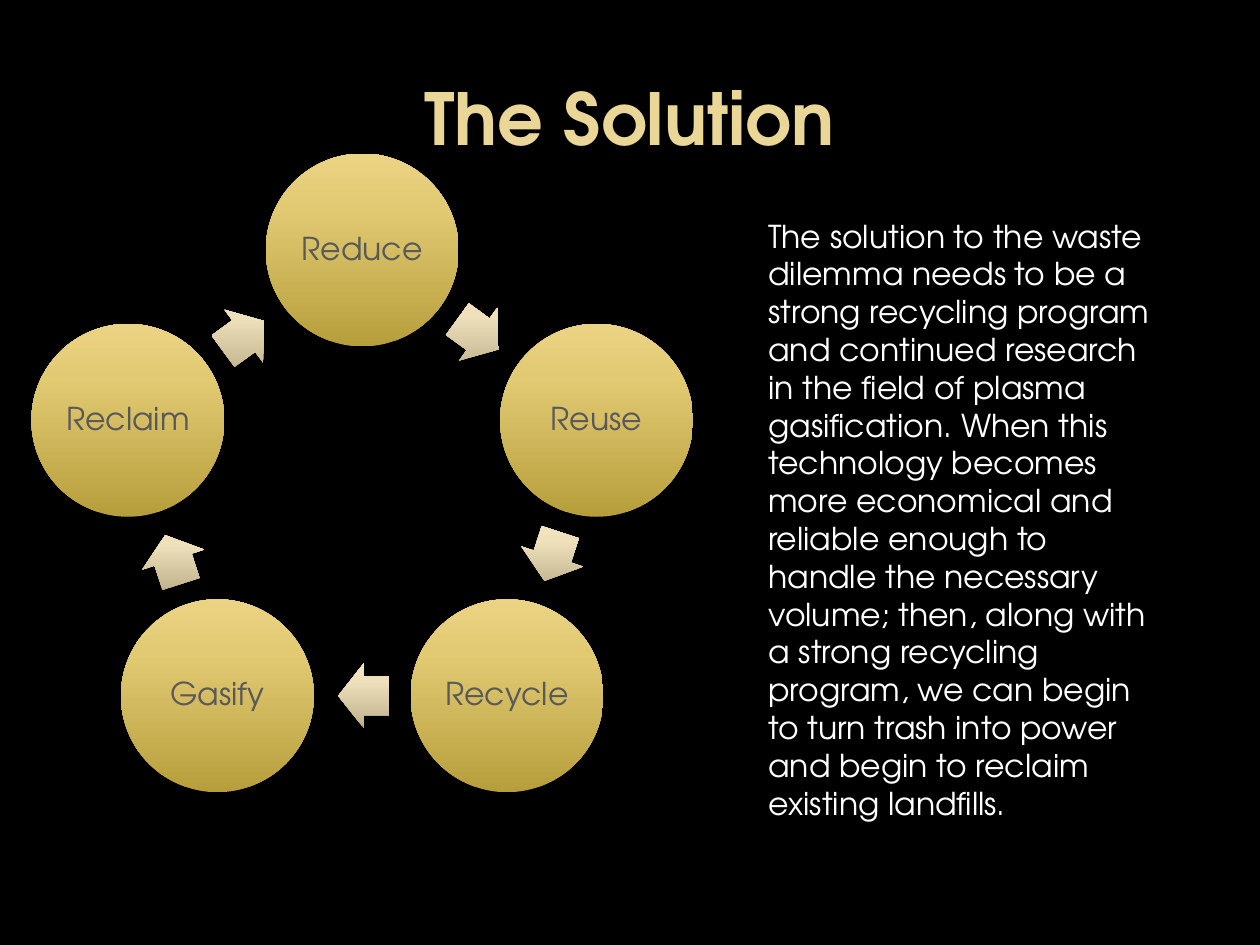
from math import cos, radians, sin

from pptx import Presentation
from pptx.dml.color import RGBColor
from pptx.enum.shapes import MSO_SHAPE
from pptx.enum.text import MSO_ANCHOR, PP_ALIGN
from pptx.oxml import parse_xml
from pptx.oxml.ns import nsdecls, qn
from pptx.util import Pt

# Content
TITLE = "The Solution"
STEPS = ["Reduce", "Reuse", "Recycle", "Gasify", "Reclaim"]
BODY = (
    "The solution to the waste dilemma needs to be a strong recycling program "
    "and continued research in the field of plasma gasification. When this "
    "technology becomes more economical and reliable enough to handle the "
    "necessary volume; then, along with a strong recycling program, we can "
    "begin to turn trash into power and begin to reclaim existing landfills."
)

# Style: gradient stops run from bottom to top
FONT = "TeX Gyre Adventor"
GOLD = [(0, "B79E3C"), (72, "E2CA73"), (100, "EBD384")]
CREAM = [(0, "BCAF89"), (72, "EDE0BA"), (100, "F2E5C0")]

# Cycle geometry in points
CENTER_X, CENTER_Y, RADIUS = 207, 283.7, 140.8
CIRCLE = 110.2
ARROW_WIDTH, ARROW_HEIGHT = 29.3, 37.2
ARROW_SETBACK = 0.9


def color(value):
    return RGBColor.from_string(value)


def write(box, text, size=18, fill="FFFFFF", bold=False, align=PP_ALIGN.LEFT,
          anchor=MSO_ANCHOR.TOP, spacing=None, inset=None):
    frame = box.text_frame
    frame.word_wrap = True
    frame.vertical_anchor = anchor
    if inset is not None:
        frame.margin_left = frame.margin_right = Pt(inset)
        frame.margin_top = frame.margin_bottom = Pt(inset)
    para = frame.paragraphs[0]
    para.alignment = align
    para.line_spacing = spacing
    span = para.add_run()
    span.text = text
    span.font.name = FONT
    span.font.size = Pt(size)
    span.font.bold = bold
    span.font.color.rgb = color(fill)


def add_text(page, left, top, width, height, text, **style):
    box = page.shapes.add_textbox(Pt(left), Pt(top), Pt(width), Pt(height))
    write(box, text, **style)


def add_part(page, kind, x, y, width, height, stops):
    """Add a gradient shape centred on x, y."""
    shape = page.shapes.add_shape(
        kind, Pt(x - width / 2), Pt(y - height / 2), Pt(width), Pt(height))
    shape.shadow.inherit = False
    shape.line.fill.background()
    shape.fill.background()
    marks = "".join(
        f'<a:gs pos="{place * 1000}"><a:srgbClr val="{value}"/></a:gs>'
        for place, value in stops)
    gradient = parse_xml(
        f'<a:gradFill {nsdecls("a")} rotWithShape="0"><a:gsLst>{marks}</a:gsLst>'
        '<a:lin ang="16200000" scaled="0"/></a:gradFill>')
    properties = shape._element.spPr
    properties.replace(properties.find(qn("a:noFill")), gradient)
    return shape


def on_ring(angle, radius):
    """Point at a clockwise angle from the top of the cycle."""
    turn = radians(angle)
    return CENTER_X + radius * sin(turn), CENTER_Y - radius * cos(turn)


def add_cycle(page):
    step = 360 / len(STEPS)
    for index, label in enumerate(STEPS):
        angle = index * step
        circle = add_part(page, MSO_SHAPE.OVAL, *on_ring(angle, RADIUS),
                          CIRCLE, CIRCLE, GOLD)
        write(circle, label, fill="595959", align=PP_ALIGN.CENTER,
              anchor=MSO_ANCHOR.MIDDLE, spacing=0.9, inset=2)

        # Arrow halfway to the next circle, set back slightly
        heading = angle + step / 2
        x, y = on_ring(heading, RADIUS * cos(radians(step / 2)))
        x -= ARROW_SETBACK * cos(radians(heading))
        y -= ARROW_SETBACK * sin(radians(heading))
        arrow = add_part(page, MSO_SHAPE.RIGHT_ARROW, x, y,
                         ARROW_WIDTH, ARROW_HEIGHT, CREAM)
        arrow.adjustments[0] = 0.6
        arrow.adjustments[1] = 0.5
        arrow.rotation = heading


def main():
    deck = Presentation()
    deck.slide_width, deck.slide_height = Pt(720), Pt(540)
    page = deck.slides.add_slide(deck.slide_layouts[6])
    page.background.fill.solid()
    page.background.fill.fore_color.rgb = color("000000")

    add_cycle(page)
    add_text(page, 432, 120.2, 234, 356.4, BODY)
    add_text(page, 36, 21.6, 648, 90, TITLE, size=41, fill="EAD696", bold=True,
             align=PP_ALIGN.CENTER, anchor=MSO_ANCHOR.MIDDLE)
    deck.save("out.pptx")


if __name__ == "__main__":
    main()
